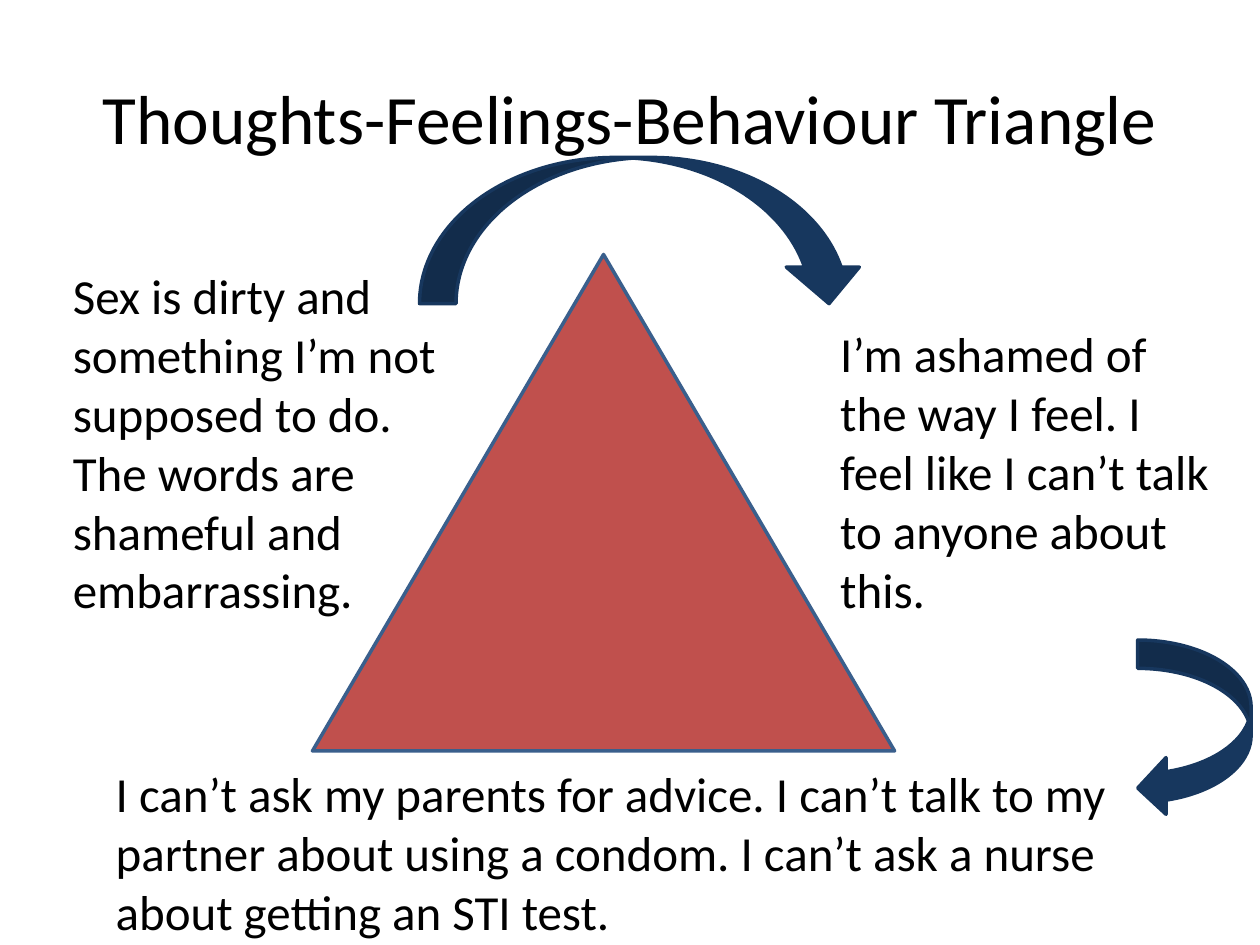
from typing import NamedTuple
from pptx import Presentation
from pptx.dml.color import RGBColor
from pptx.enum.shapes import MSO_SHAPE as Kind
from pptx.enum.text import MSO_ANCHOR as Anchor, PP_ALIGN as Align
from pptx.util import Inches, Pt

COLS, ROWS = 100, 75
BLACK, NAVY, RED, BLUE = "000000", "17375E", "C0504D", "3A5F8C"


class Area(NamedTuple):
    col: float
    row: float
    wide: float
    high: float


class Label(NamedTuple):
    area: Area
    text: str
    size: float = 28
    align: Align = Align.LEFT
    anchor: Anchor = Anchor.TOP


class Figure(NamedTuple):
    area: Area
    kind: Kind
    fill: str
    line: str


TITLE = Label(Area(5, 3, 90, 12.5), "Thoughts-Feelings-Behaviour Triangle",
              39.6, Align.CENTER, Anchor.MIDDLE)
LABELS = [
    Label(Area(4.8, 20.6, 30.8, 29.3),
          "Sex is dirty and something I’m not supposed to do. "
          "The words are shameful and embarrassing."),
    Label(Area(65.7, 25.2, 31.8, 24.6),
          "I’m ashamed of the way I feel. "
          "I feel like I can’t talk to anyone about this."),
    Label(Area(8.2, 60.1, 83.6, 15.1),
          "I can’t ask my parents for advice. "
          "I can’t talk to my partner about using a condom. "
          "I can’t ask a nurse about getting an STI test."),
]
TRIANGLE = Figure(Area(24.8, 20.2, 46.2, 39.4), Kind.ISOSCELES_TRIANGLE, RED, BLUE)
ARROWS = [
    Figure(Area(33.3, 12.5, 35.4, 11.6), Kind.CURVED_DOWN_ARROW, NAVY, NAVY),
    Figure(Area(90.3, 50.8, 9, 14), Kind.CURVED_LEFT_ARROW, NAVY, NAVY),
]

deck = Presentation()
deck.slide_width, deck.slide_height = Inches(10), Inches(7.5)
slide = deck.slides.add_slide(deck.slide_layouts[6])


def tint(code: str) -> RGBColor:
    return RGBColor.from_string(code)


def place(area: Area) -> list[int]:
    across, down = deck.slide_width / COLS, deck.slide_height / ROWS
    return [round(part * unit) for part, unit in zip(area, (across, down) * 2)]


def apply(target: object, form: dict) -> None:
    for name, value in form.items():
        setattr(target, name, value)


def write(label: Label) -> None:
    frame = slide.shapes.add_textbox(*place(label.area)).text_frame
    apply(frame, {"word_wrap": True, "vertical_anchor": label.anchor})
    para = frame.paragraphs[0]
    para.alignment = label.align
    run = para.add_run()
    run.text = label.text
    apply(run.font, {"name": "Calibri", "size": Pt(label.size)})
    run.font.color.rgb = tint(BLACK)


def draw(figure: Figure) -> None:
    shape = slide.shapes.add_shape(figure.kind, *place(figure.area))
    shape.shadow.inherit = False
    shape.fill.solid()
    shape.fill.fore_color.rgb = tint(figure.fill)
    shape.line.color.rgb = tint(figure.line)
    shape.line.width = Pt(2)


def main() -> None:
    write(TITLE)
    draw(TRIANGLE)
    for label in LABELS:
        write(label)
    for arrow in ARROWS:
        draw(arrow)
    deck.save("out.pptx")


if __name__ == "__main__":
    main()
